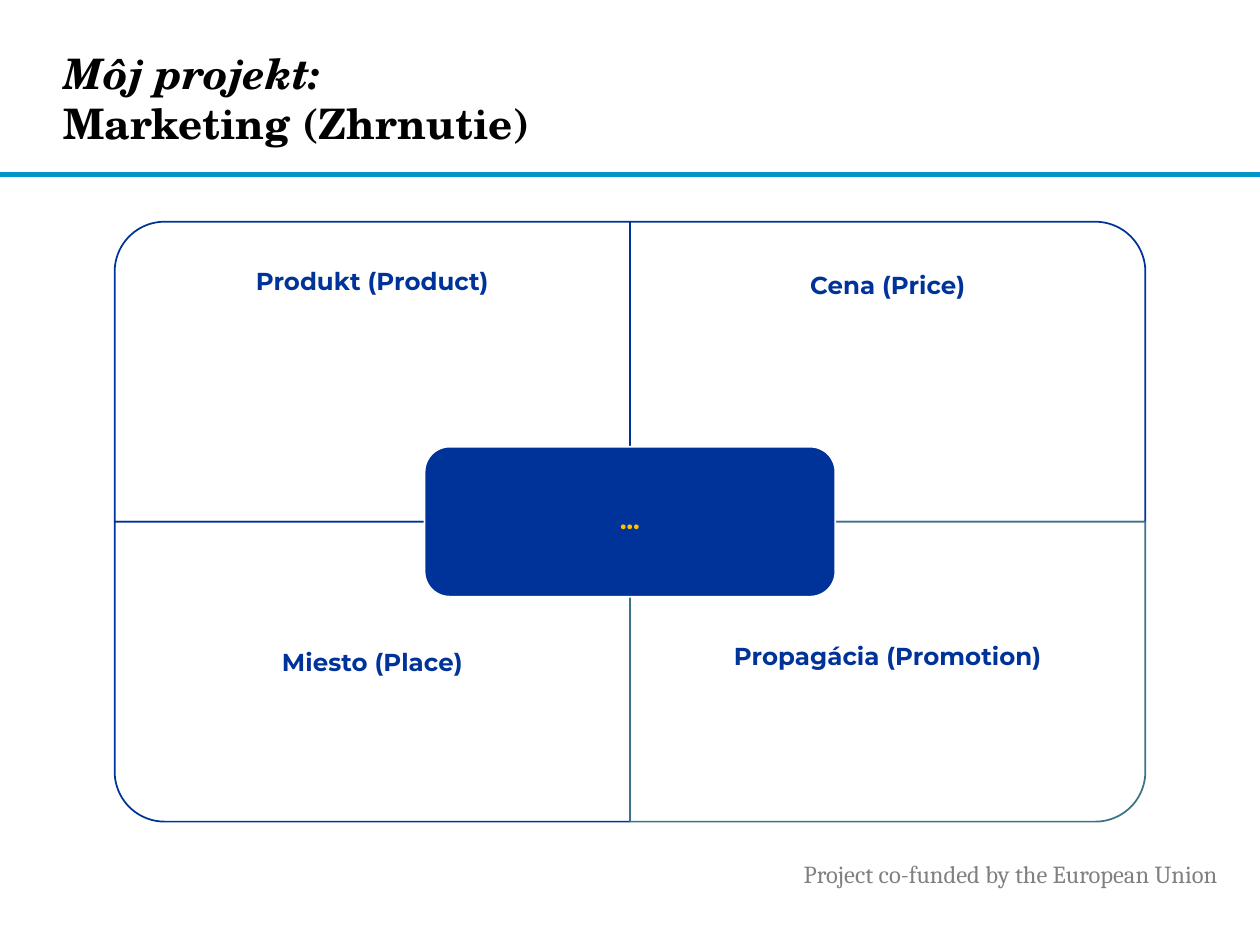
from pptx import Presentation
from pptx.dml.color import RGBColor
from pptx.enum.shapes import MSO_SHAPE
from pptx.enum.text import MSO_ANCHOR, PP_ALIGN
from pptx.util import Pt

BLUE = RGBColor(0x00, 0x33, 0x99)
TEAL = RGBColor(0x3C, 0x74, 0x86)
GOLD = RGBColor(0xFF, 0xC0, 0x00)
GRAY = RGBColor(0x80, 0x80, 0x80)
BLACK = RGBColor(0, 0, 0)
WHITE = RGBColor(0xFF, 0xFF, 0xFF)
RULE_FILL = RGBColor(0x0C, 0x94, 0xB7)
RULE_LINE = RGBColor(0x00, 0x96, 0xD3)


def add_box(kind, x, y, w, h, fill, line):
    sp = s.shapes.add_shape(kind, Pt(x), Pt(y), Pt(w), Pt(h))
    sp.shadow.inherit = False
    sp.fill.solid()
    sp.fill.fore_color.rgb = fill
    sp.line.color.rgb = line
    sp.line.width = Pt(1)
    return sp


def add_run(p, text, size, font, color, bold=False, italic=False):
    r = p.add_run()
    r.text = text
    r.font.size = Pt(size)
    r.font.name = font
    r.font.color.rgb = color
    r.font.bold = bold
    r.font.italic = italic


prs = Presentation()
prs.slide_width, prs.slide_height = Pt(720), Pt(540)
s = prs.slides.add_slide(prs.slide_layouts[5])

# Rule under the title
add_box(MSO_SHAPE.RECTANGLE, 0, 98.6, 720, 2.2, RULE_FILL, RULE_LINE)

# Footer
tf = s.shapes.add_textbox(Pt(452.2), Pt(487.4), Pt(263.5), Pt(24.5)).text_frame
tf.word_wrap = True
add_run(tf.paragraphs[0], "Project co-funded by the European Union", 14, "Cambria", GRAY)

# Title
title = s.shapes.title
title.left, title.top, title.width, title.height = Pt(36.4), Pt(13), Pt(523.4), Pt(85.7)
tf = title.text_frame
tf.margin_left = tf.margin_right = tf.margin_top = tf.margin_bottom = 0
tf.vertical_anchor = MSO_ANCHOR.MIDDLE
p = tf.paragraphs[0]
p.alignment = PP_ALIGN.LEFT
add_run(p, "Môj projekt:", 24, "TeX Gyre Schola", BLACK, bold=True, italic=True)
p.add_line_break()
add_run(p, "Marketing (Zhrnutie)", 24, "TeX Gyre Schola", BLACK, bold=True)

# Four quadrants around the centre: column, row, rotation, line, heading, heading offset
CX, CY, W, H = 360, 298.1, 294.5, 171.4
LABEL_H = H * 0.75
quadrants = [
    (0, 0, 270, BLUE, "Produkt (Product)", 27.4),
    (1, 0, 0, BLUE, "Cena (Price)", 29.2),
    (0, 1, 180, BLUE, "Miesto (Place)", 30.6),
    (1, 1, 90, TEAL, "Propagácia (Promotion)", 27.2),
]
for col, row, rotation, line, heading, offset in quadrants:
    x, y = CX + (col - 1) * W, CY + (row - 1) * H
    # A quarter turn swaps the sides about the same centre
    w, h = (H, W) if rotation in (90, 270) else (W, H)
    sp = add_box(MSO_SHAPE.ROUND_1_RECTANGLE, x + (W - w) / 2, y + (H - h) / 2,
                 w, h, WHITE, line)
    sp.rotation = rotation

    label_y = y + row * (H - LABEL_H)
    tf = s.shapes.add_textbox(Pt(x), Pt(label_y), Pt(W), Pt(LABEL_H)).text_frame
    tf.word_wrap = True
    tf.margin_left = tf.margin_right = Pt(8)
    tf.margin_top = Pt(offset)
    p = tf.paragraphs[0]
    p.alignment = PP_ALIGN.CENTER
    p.line_spacing = 0.9
    add_run(p, heading, 14, "Montserrat", BLUE, bold=True)

# Centre box
w, h = 234.7, H / 2
sp = add_box(MSO_SHAPE.ROUNDED_RECTANGLE, CX - w / 2, CY - h / 2, w, h, BLUE, WHITE)
tf = sp.text_frame
tf.vertical_anchor = MSO_ANCHOR.MIDDLE
p = tf.paragraphs[0]
p.alignment = PP_ALIGN.CENTER
p.line_spacing = 0.9
add_run(p, "…", 14, "Montserrat", GOLD, bold=True)

prs.save("out.pptx")
